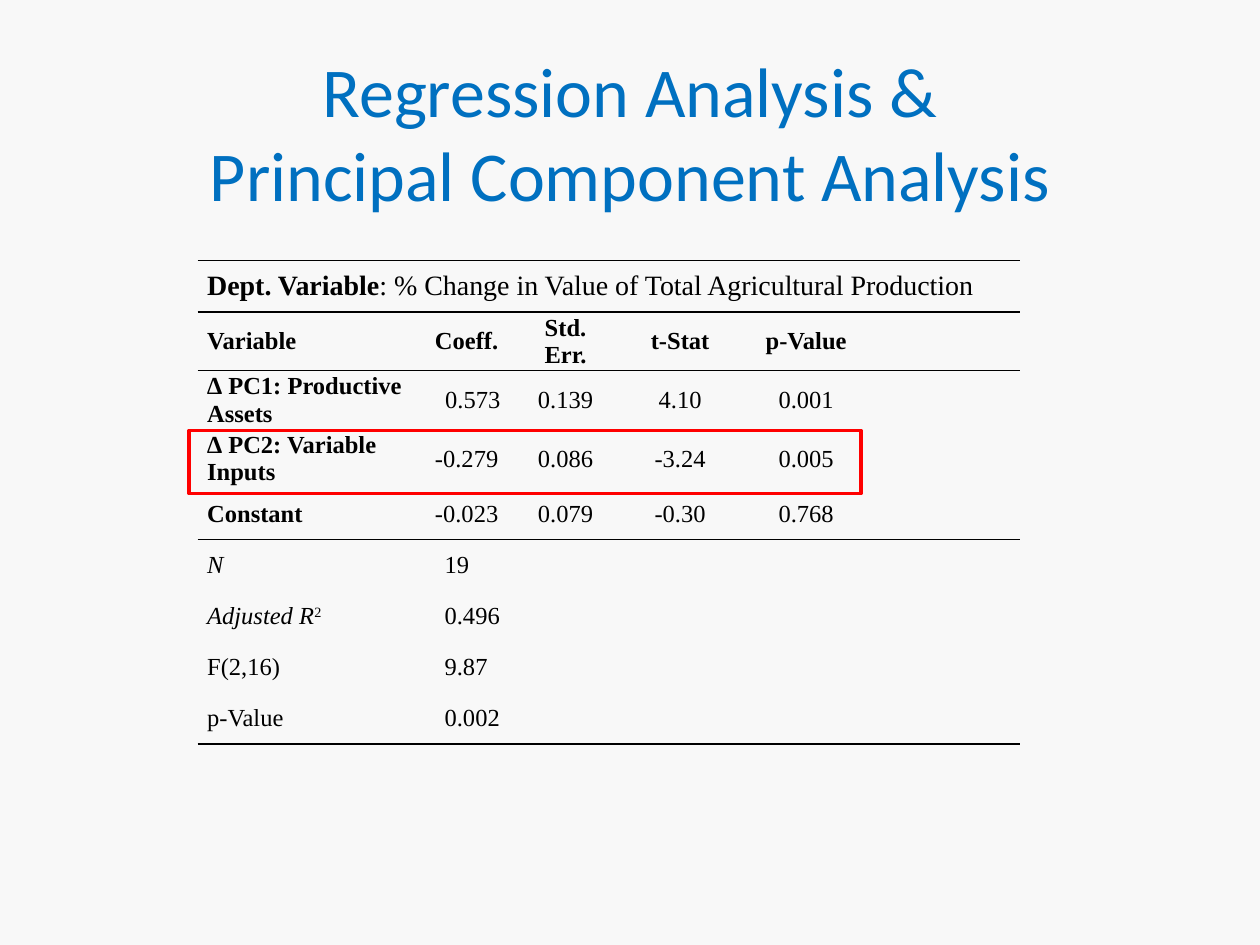
from dataclasses import dataclass

from lxml import etree
from pptx import Presentation
from pptx.dml.color import RGBColor
from pptx.enum import shapes, text
from pptx.oxml import ns
from pptx.util import Pt

COLORS = {"background": "F8F8F8", "title": "0070C0", "ink": "000000", "highlight": "FF0000"}
SERIF = "Times New Roman"
LEFT, CENTER = text.PP_ALIGN.LEFT, text.PP_ALIGN.CENTER
COLUMN_WIDTHS = [126.7, 54, 59, 72, 72, 72, 14]
ROW_HEIGHT = 29.2
RULED_EDGES = {0, 1, 2, 5, 9}  # horizontal rules, counted from the table's top edge


@dataclass(frozen=True)
class Coefficient:
    variable: str
    values: tuple[str, str, str, str]
    indent: float = 0


@dataclass(frozen=True)
class FitStatistic:
    label: str
    value: str
    italic: bool = False
    superscript: str = ""


COEFFICIENTS = [
    Coefficient("∆ PC1: Productive Assets", ("0.573", "0.139", "4.10", "0.001"), indent=7),
    Coefficient("∆ PC2: Variable Inputs", ("-0.279", "0.086", "-3.24", "0.005")),
    Coefficient("Constant", ("-0.023", "0.079", "-0.30", "0.768")),
]
FIT_STATISTICS = [
    FitStatistic("N", "19", italic=True),
    FitStatistic("Adjusted R", "0.496", italic=True, superscript="2"),
    FitStatistic("F(2,16)", "9.87"),
    FitStatistic("p-Value", "0.002"),
]


def rgb(name: str) -> RGBColor:
    return RGBColor.from_string(COLORS[name])


def write(frame, words: str, *, size: float = 14, font: str = SERIF, color: str = "ink",
          bold: bool = False, italic: bool = False, superscript: bool = False,
          align=LEFT, indent: float = 0) -> None:
    """Append words to the frame's first paragraph; a newline is a line break."""
    paragraph = frame.paragraphs[0]
    paragraph.alignment = align
    paragraph.line_spacing = 1.0
    if indent:
        paragraph._p.get_or_add_pPr().set("marL", str(Pt(indent)))
    for number, line in enumerate(words.split("\n")):
        if number:
            paragraph.add_line_break()
        run = paragraph.add_run()
        run.text = line
        run.font.name, run.font.size = font, Pt(size)
        run.font.bold, run.font.italic = bold, italic
        run.font.color.rgb = rgb(color)
        if superscript:
            run._r.get_or_add_rPr().set("baseline", "30000")


def set_borders(cell, ruled_sides: set[str]) -> None:
    """Rule the given sides (T, B) and clear the others."""
    properties = cell._tc.get_or_add_tcPr()
    for position, side in enumerate("LRTB"):
        border = etree.Element(ns.qn(f"a:ln{side}"), w=str(Pt(1)))
        if side in ruled_sides:
            fill = etree.SubElement(border, ns.qn("a:solidFill"))
            etree.SubElement(fill, ns.qn("a:srgbClr"), val=COLORS["ink"])
        else:
            etree.SubElement(border, ns.qn("a:noFill"))
        properties.insert(position, border)


def add_title(slide) -> None:
    title = slide.shapes.add_textbox(Pt(36), Pt(30), Pt(648), Pt(90)).text_frame
    title.word_wrap = True
    title.vertical_anchor = text.MSO_ANCHOR.MIDDLE
    write(title, "Regression Analysis &\nPrincipal Component Analysis",
          size=40, font="Calibri", color="title", align=CENTER)


def add_empty_table(slide, row_count: int):
    table = slide.shapes.add_table(
        row_count, len(COLUMN_WIDTHS), Pt(113), Pt(149),
        Pt(sum(COLUMN_WIDTHS)), Pt(ROW_HEIGHT * row_count)).table
    table.first_row = table.horz_banding = False
    for column, width in zip(table.columns, COLUMN_WIDTHS):
        column.width = Pt(width)
    for index, row in enumerate(table.rows):
        row.height = Pt(ROW_HEIGHT)
        ruled_sides = {side for side, edge in (("T", index), ("B", index + 1))
                       if edge in RULED_EDGES}
        for cell in row.cells:
            cell.margin_left = cell.margin_right = Pt(5.4)
            cell.margin_top = cell.margin_bottom = 0
            cell.vertical_anchor = text.MSO_ANCHOR.MIDDLE
            cell.fill.background()
            set_borders(cell, ruled_sides)
    return table


def add_regression_table(slide) -> None:
    first_fit_row = 2 + len(COEFFICIENTS)
    table = add_empty_table(slide, first_fit_row + len(FIT_STATISTICS))

    table.cell(0, 0).merge(table.cell(0, 5))
    heading = table.cell(0, 0).text_frame
    write(heading, "Dept. Variable", size=16, bold=True)
    write(heading, ": % Change in Value of Total Agricultural Production", size=16)

    for column, label in enumerate(["Variable", "Coeff.", "Std. Err.", "t-Stat", "p-Value"]):
        write(table.cell(1, column).text_frame, label, bold=True,
              align=CENTER if column else LEFT)

    for row, coefficient in enumerate(COEFFICIENTS, start=2):
        write(table.cell(row, 0).text_frame, coefficient.variable, bold=True)
        for column, value in enumerate(coefficient.values, start=1):
            write(table.cell(row, column).text_frame, value, align=CENTER,
                  indent=coefficient.indent if column == 1 else 0)

    for row, statistic in enumerate(FIT_STATISTICS, start=first_fit_row):
        label = table.cell(row, 0).text_frame
        write(label, statistic.label, italic=statistic.italic)
        if statistic.superscript:
            write(label, statistic.superscript, superscript=True)
        write(table.cell(row, 1).text_frame, statistic.value, indent=9)


def add_highlight(slide) -> None:
    highlight = slide.shapes.add_shape(
        shapes.MSO_SHAPE.RECTANGLE, Pt(108), Pt(246), Pt(384), Pt(36))
    highlight.shadow.inherit = False
    highlight.fill.background()
    highlight.line.color.rgb = rgb("highlight")
    highlight.line.width = Pt(2)


def main() -> None:
    deck = Presentation()
    deck.slide_width, deck.slide_height = Pt(720), Pt(540)
    slide = deck.slides.add_slide(deck.slide_layouts[6])
    slide.background.fill.solid()
    slide.background.fill.fore_color.rgb = rgb("background")
    add_title(slide)
    add_regression_table(slide)
    add_highlight(slide)
    deck.save("out.pptx")


if __name__ == "__main__":
    main()
